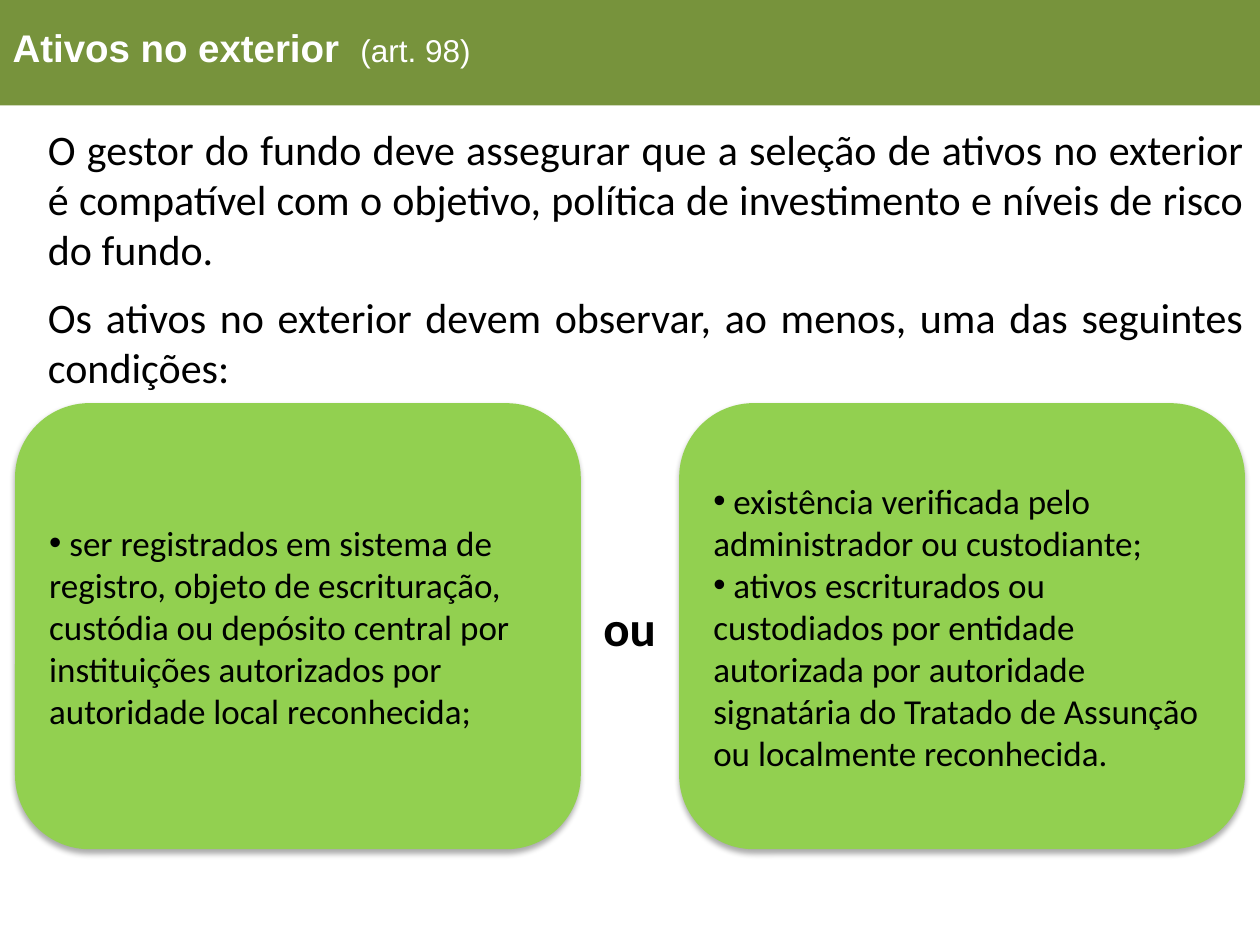
from dataclasses import dataclass

from lxml.etree import SubElement
from pptx import Presentation
from pptx.dml.color import RGBColor
from pptx.enum.shapes import MSO_SHAPE as Shape
from pptx.enum.text import MSO_ANCHOR as Anchor, MSO_AUTO_SIZE as AutoSize, PP_ALIGN as Align
from pptx.oxml.ns import qn
from pptx.util import Pt


@dataclass(frozen=True)
class Theme:
    banner: str = "77933C"
    card: str = "92D050"
    shadow: str = "000000"
    text: str = "000000"
    title_text: str = "FFFFFF"
    title_font: str = "Arial"
    body_font: str = "Calibri"
    title_size: float = 22
    article_size: float = 18
    body_size: float = 24
    card_size: float = 20
    joiner_size: float = 28


@dataclass(frozen=True)
class Box:
    left: float
    top: float
    width: float
    height: float

    def lengths(self):
        return Pt(self.left), Pt(self.top), Pt(self.width), Pt(self.height)


@dataclass(frozen=True)
class Card:
    left: float
    items: tuple[str, ...]


THEME = Theme()
SLIDE_W, SLIDE_H = 720, 540
CARD_W, CARD_H, CARD_TOP, CARD_MARGIN = 323.3, 254.9, 230.4, 8.6

BODY = (
    "O gestor do fundo deve assegurar que a seleção de ativos no exterior é compatível "
    "com o objetivo, política de investimento e níveis de risco do fundo.",
    "Os ativos no exterior devem observar, ao menos, uma das seguintes condições:",
)
CARDS = (
    Card(CARD_MARGIN, (
        "ser registrados em sistema de registro, objeto de escrituração, custódia ou "
        "depósito central por instituições autorizados por autoridade local reconhecida;",
    )),
    Card(SLIDE_W - CARD_MARGIN - CARD_W, (
        "existência verificada pelo administrador ou custodiante;",
        "ativos escriturados ou custodiados por entidade autorizada por autoridade "
        "signatária do Tratado de Assunção ou localmente reconhecida.",
    )),
)


def place(sp, box: Box) -> None:
    sp.left, sp.top, sp.width, sp.height = box.lengths()


def paint(sp, color: str) -> None:
    sp.fill.solid()
    sp.fill.fore_color.rgb = RGBColor.from_string(color)
    sp.line.fill.background()


def add_run(p, text: str, *, size: float, font: str = THEME.body_font,
            color: str = THEME.text, bold: bool = False, spacing: float = 0):
    r = p.add_run()
    r.text = text
    r.font.name, r.font.size, r.font.bold = font, Pt(size), bold
    r.font.color.rgb = RGBColor.from_string(color)
    if spacing:
        r._r.get_or_add_rPr().set("spc", str(round(spacing * 100)))
    return r


def next_paragraph(tf, index: int, *, align=Align.LEFT, before: float = 0,
                   after: float = 0, bullet: str = ""):
    """Return the first paragraph or a new one, unindented, with an optional bullet."""
    p = tf.add_paragraph() if index else tf.paragraphs[0]
    p.alignment = align
    p.space_before, p.space_after = Pt(before), Pt(after)
    pPr = p._p.get_or_add_pPr()
    pPr.set("marL", "0")
    pPr.set("indent", "0")
    if bullet:
        SubElement(pPr, qn("a:buFont"), typeface="Arial")
        SubElement(pPr, qn("a:buChar"), char=bullet)
    else:
        SubElement(pPr, qn("a:buNone"))
    return p


def add_shadow(sp, blur: float, distance: float, alpha: int) -> None:
    sp.shadow.inherit = False
    effects = sp._element.spPr.find(qn("a:effectLst"))
    outer = SubElement(effects, qn("a:outerShdw"), blurRad=str(Pt(blur)),
                       dist=str(Pt(distance)), dir="5400000", rotWithShape="0")
    color = SubElement(outer, qn("a:srgbClr"), val=THEME.shadow)
    SubElement(color, qn("a:alpha"), val=str(alpha * 1000))


def fill_title(sp) -> None:
    place(sp, Box(0, -5.8, SLIDE_W, 66))
    paint(sp, THEME.banner)
    tf = sp.text_frame
    tf.auto_size, tf.vertical_anchor = AutoSize.NONE, Anchor.MIDDLE
    p = next_paragraph(tf, 0, after=2)
    style = {"font": THEME.title_font, "color": THEME.title_text}
    add_run(p, "Ativos no exterior", size=THEME.title_size, bold=True, **style)
    add_run(p, " ", size=THEME.title_size, bold=True, spacing=6, **style)
    add_run(p, "(art. 98)", size=THEME.article_size, **style)


def fill_body(sp) -> None:
    place(sp, Box(20.2, 66.7, 697.7, 160))
    tf = sp.text_frame
    tf.auto_size, tf.vertical_anchor = AutoSize.NONE, Anchor.TOP
    for i, text in enumerate(BODY):
        p = next_paragraph(tf, i, align=Align.JUSTIFY, before=9.8 if i else 0)
        add_run(p, text, size=THEME.body_size)


def draw_card(slide, card: Card) -> None:
    box = Box(card.left, CARD_TOP, CARD_W, CARD_H)
    sp = slide.shapes.add_shape(Shape.ROUNDED_RECTANGLE, *box.lengths())
    paint(sp, THEME.card)
    add_shadow(sp, blur=3.5, distance=2.2, alpha=32)
    tf = sp.text_frame
    tf.word_wrap, tf.vertical_anchor = True, Anchor.MIDDLE
    for i, item in enumerate(card.items):
        add_run(next_paragraph(tf, i, bullet="•"), f" {item}", size=THEME.card_size)


def draw_joiner(slide) -> None:
    sp = slide.shapes.add_textbox(*Box(337.7, 337.7, 44.6, 41).lengths())
    tf = sp.text_frame
    tf.word_wrap, tf.auto_size = False, AutoSize.SHAPE_TO_FIT_TEXT
    add_run(next_paragraph(tf, 0), "ou", size=THEME.joiner_size, bold=True)


def main() -> None:
    prs = Presentation()
    prs.slide_width, prs.slide_height = Pt(SLIDE_W), Pt(SLIDE_H)
    slide = prs.slides.add_slide(prs.slide_layouts[1])
    fill_title(slide.shapes.title)
    fill_body(slide.placeholders[1])
    for card in CARDS:
        draw_card(slide, card)
    draw_joiner(slide)
    prs.save("out.pptx")


if __name__ == "__main__":
    main()
